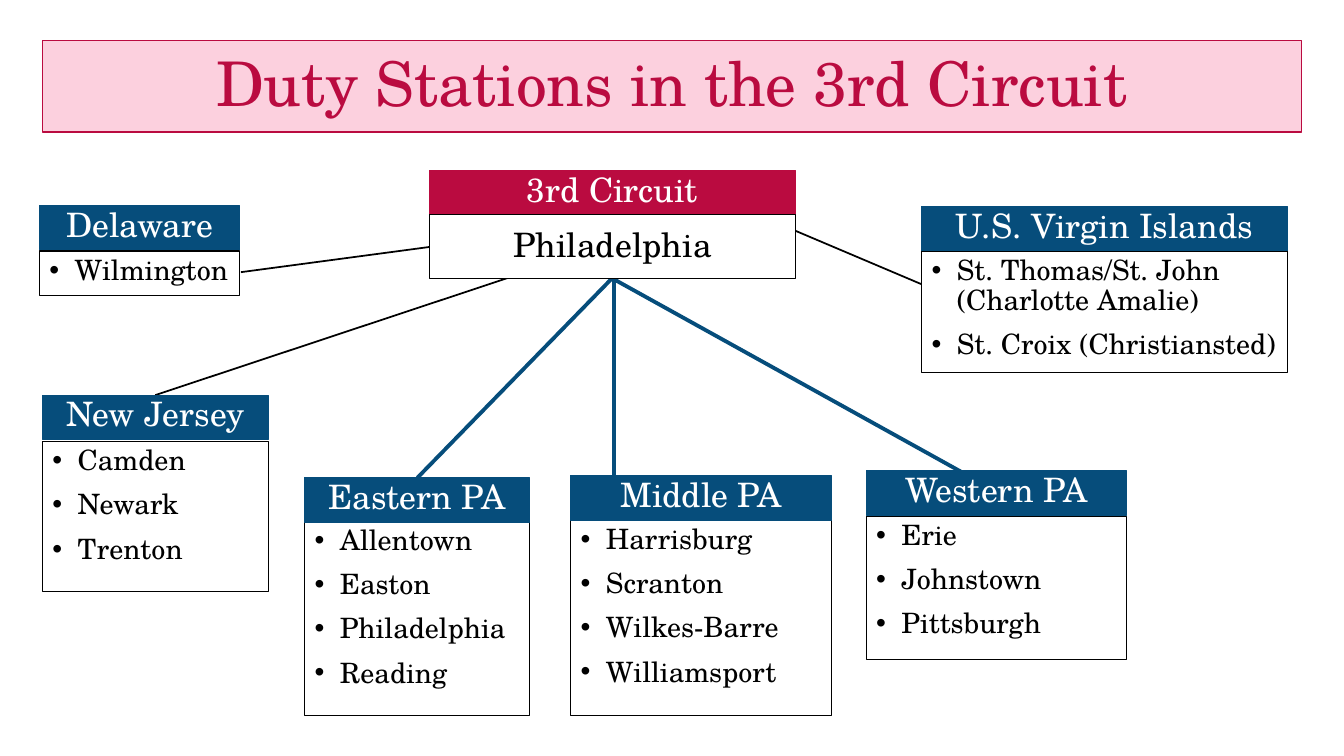
from copy import deepcopy

from lxml.etree import SubElement
from pptx import Presentation
from pptx.dml.color import RGBColor
from pptx.enum.shapes import MSO_CONNECTOR
from pptx.enum.text import MSO_ANCHOR, MSO_AUTO_SIZE, PP_ALIGN
from pptx.oxml.ns import qn
from pptx.util import Inches, Pt

FONT = "TeX Gyre Schola"
RED, PINK, BLUE = "BA0B40", "FCD0DE", "064D7B"
BLACK, WHITE = "000000", "FFFFFF"
HEADER_HEIGHT = 0.44

TITLE = "Duty Stations in the 3rd Circuit"
# header, left, header top, width, list top, list height, stations
DISTRICTS = [
    ("Delaware", 0.39, 2.04, 1.99, 2.49, 0.44, ["Wilmington"]),
    ("New Jersey", 0.42, 3.92, 2.24, 4.38, 1.49, ["Camden", "Newark", "Trenton"]),
    ("Eastern PA", 3.02, 4.74, 2.23, 5.17, 1.93,
     ["Allentown", "Easton", "Philadelphia", "Reading"]),
    ("Middle PA", 5.66, 4.72, 2.59, 5.16, 1.94,
     ["Harrisburg", "Scranton", "Wilkes-Barre", "Williamsport"]),
    ("Western PA", 8.59, 4.67, 2.58, 5.12, 1.42, ["Erie", "Johnstown", "Pittsburgh"]),
    ("U.S. Virgin Islands", 9.14, 2.05, 3.63, 2.49, 1.21,
     ["St. Thomas/St. John (Charlotte Amalie)", "St. Croix (Christiansted)"]),
]
# start, end, colour, width
LINKS = [
    ((7.89, 2.29), (9.14, 2.82), BLACK, 1.25),
    ((6.09, 4.74), (6.09, 2.76), BLUE, 2.75),
    ((4.26, 2.45), (2.39, 2.7), BLACK, 1.25),
    ((5.03, 2.76), (1.54, 3.92), BLACK, 1.25),
    ((9.64, 4.74), (6.07, 2.76), BLUE, 2.75),
    ((4.14, 4.74), (6.13, 2.7), BLUE, 2.75),
]


def color(value):
    return RGBColor.from_string(value)


def add_body_placeholders(layout, count):
    """Repeat the layout's body placeholder until it has count of them."""
    body = layout.placeholders[1].element
    for number in range(1, count):
        twin = deepcopy(body)
        twin.xpath(".//p:ph")[0].set("idx", str(20 + number))
        properties = twin.xpath(".//p:cNvPr")[0]
        properties.set("id", str(100 + number))
        properties.set("name", f"Body {number + 1}")
        body.addnext(twin)


def format_box(box, place, fill, line, line_width, anchor):
    box.left, box.top, box.width, box.height = map(Inches, place)
    box.fill.solid()
    box.fill.fore_color.rgb = color(fill)
    box.line.color.rgb = color(line)
    box.line.width = Pt(line_width)
    frame = box.text_frame
    frame.word_wrap = True
    frame.auto_size = MSO_AUTO_SIZE.NONE
    frame.vertical_anchor = anchor


def write(box, lines, size, ink, spacing=0.9, before=10, bullets=False):
    frame = box.text_frame
    for number, line in enumerate(lines):
        para = frame.add_paragraph() if number else frame.paragraphs[0]
        para.alignment = PP_ALIGN.LEFT if bullets else PP_ALIGN.CENTER
        para.line_spacing = spacing
        para.space_before = Pt(before)
        properties = para._p.get_or_add_pPr()
        indent = Inches(0.25) if bullets else 0
        properties.set("marL", str(indent))
        properties.set("indent", str(-indent))
        if bullets:
            SubElement(properties, qn("a:buFont"), typeface="Arial")
            SubElement(properties, qn("a:buChar"), char="•")
        else:
            SubElement(properties, qn("a:buNone"))
        span = para.add_run()
        span.text = line
        span.font.name = FONT
        span.font.size = Pt(size)
        span.font.color.rgb = color(ink)


def add_header(box, text, left, top, width, fill):
    place = (left, top, width, HEADER_HEIGHT)
    format_box(box, place, fill, fill, 0.75, MSO_ANCHOR.MIDDLE)
    write(box, [text], 24, WHITE, spacing=0.8)


def add_link(page, start, end, ink, width):
    """Draw a line behind all the boxes."""
    link = page.shapes.add_connector(
        MSO_CONNECTOR.STRAIGHT, *map(Inches, start + end))
    link.line.color.rgb = color(ink)
    link.line.width = Pt(width)
    SubElement(link.element.spPr, qn("a:effectLst"))
    page.shapes.title.element.addprevious(link.element)


def main():
    deck = Presentation()
    deck.slide_width, deck.slide_height = Inches(13.33), Inches(7.5)
    layout = deck.slide_layouts[1]
    add_body_placeholders(layout, 2 + 2 * len(DISTRICTS))
    page = deck.slides.add_slide(layout)
    title, *bodies = page.placeholders
    boxes = iter(bodies)

    format_box(title, (0.42, 0.4, 12.49, 0.91), PINK, RED, 1, MSO_ANCHOR.MIDDLE)
    write(title, [TITLE], 44, RED, before=0)

    add_header(next(boxes), "3rd Circuit", 4.26, 1.69, 3.63, RED)
    seat = next(boxes)
    format_box(seat, (4.26, 2.13, 3.63, 0.63), WHITE, BLACK, 0.75, MSO_ANCHOR.MIDDLE)
    write(seat, ["Philadelphia"], 24, BLACK)

    for name, left, top, width, list_top, height, stations in DISTRICTS:
        add_header(next(boxes), name, left, top, width, BLUE)
        station_list = next(boxes)
        place = (left, list_top, width, height)
        format_box(station_list, place, WHITE, BLACK, 0.75, MSO_ANCHOR.TOP)
        write(station_list, stations, 20, BLACK, bullets=True)

    for link in LINKS:
        add_link(page, *link)
    deck.save("out.pptx")


if __name__ == "__main__":
    main()
